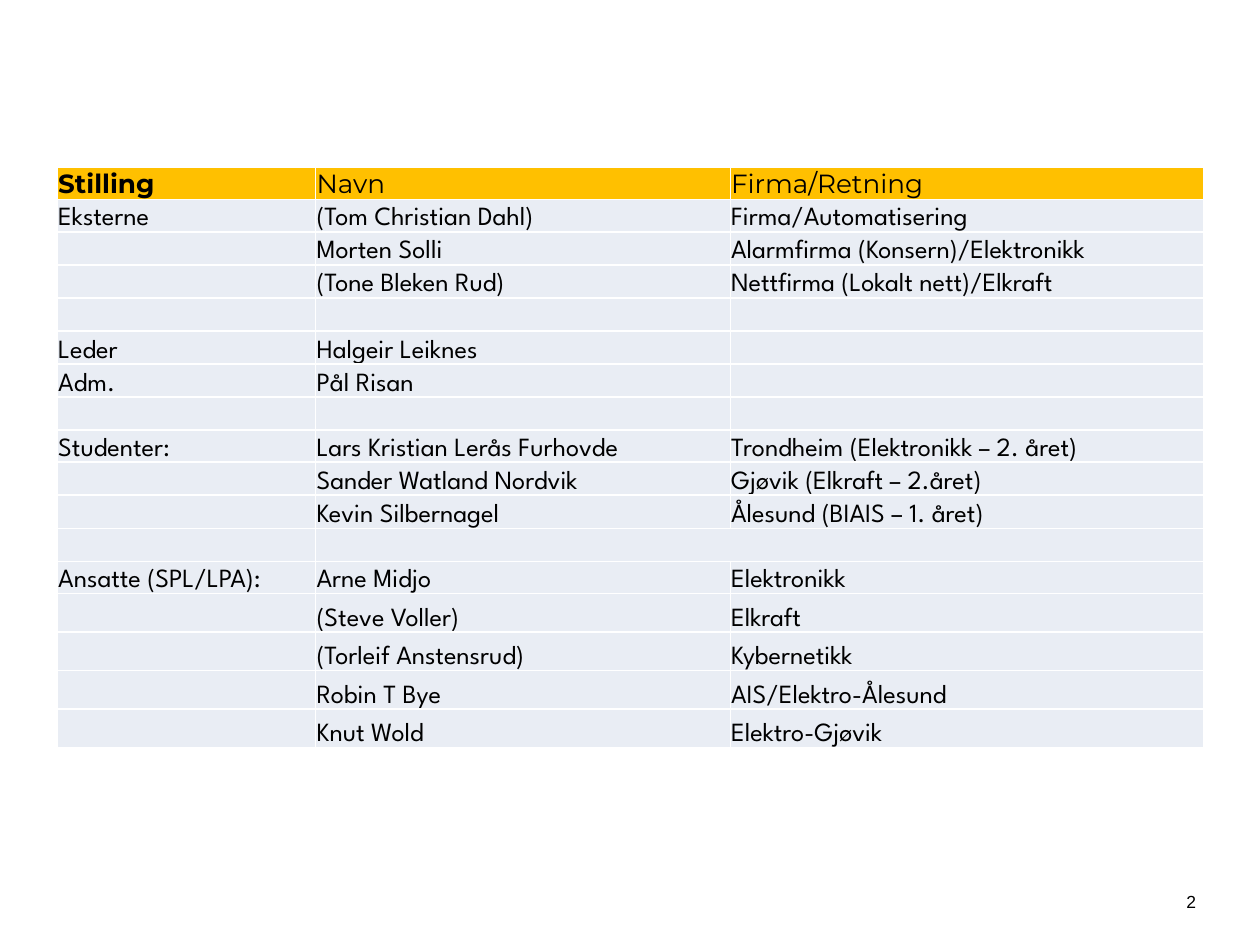
from dataclasses import dataclass

from lxml.etree import SubElement
from pptx import Presentation
from pptx.dml.color import RGBColor
from pptx.enum.text import MSO_ANCHOR, PP_ALIGN
from pptx.oxml.ns import qn
from pptx.util import Pt

COLORS = {"head": "FFC000", "body": "E9EDF4", "line": "FFFFFF", "text": "000000"}
WIDTHS = (147.6, 236.9, 270.7)
LOW, HIGH, TALL = 18.4, 22, 4
SIZE = 15


@dataclass(frozen=True)
class Row:
    post: str = ""
    name: str = ""
    firm: str = ""
    merge: bool = False


ROWS = (
    Row("Stilling", "Navn", "Firma/Retning"),
    Row("Eksterne", "(Tom Christian Dahl)", "Firma/Automatisering"),
    Row("", "Morten Solli", "Alarmfirma (Konsern)/Elektronikk"),
    Row("", "(Tone Bleken Rud)", "Nettfirma (Lokalt nett)/Elkraft"),
    Row(),
    Row("Leder", "Halgeir Leiknes"),
    Row("Adm.", "Pål Risan"),
    Row(),
    Row("Studenter:", "Lars Kristian Lerås Furhovde", "Trondheim (Elektronikk – 2. året)"),
    Row("", "Sander Watland Nordvik", "Gjøvik (Elkraft – 2.året)"),
    Row("", "Kevin Silbernagel", "Ålesund (BIAIS – 1. året)"),
    Row(merge=True),
    Row("Ansatte (SPL/LPA):", "Arne Midjo", "Elektronikk"),
    Row("", "(Steve Voller)", "Elkraft"),
    Row("", "(Torleif Anstensrud)", "Kybernetikk"),
    Row("", "Robin T Bye", "AIS/Elektro-Ålesund"),
    Row("", "Knut Wold", "Elektro-Gjøvik"),
)


def color(key: str) -> RGBColor:
    return RGBColor.from_string(COLORS[key])


def write(para, text: str, font: str, size: float, bold: bool = False) -> None:
    run = para.add_run()
    run.text = text
    run.font.name = font
    run.font.size = Pt(size)
    run.font.bold = bold
    run.font.color.rgb = color("text")


def border(cell) -> None:
    props = cell._tc.get_or_add_tcPr()
    for side in ("lnL", "lnR", "lnT", "lnB"):
        line = SubElement(props, qn(f"a:{side}"), w=str(Pt(1)))
        fill = SubElement(line, qn("a:solidFill"))
        SubElement(fill, qn("a:srgbClr"), val=COLORS["line"])


def draw_cell(cell, text: str, head: bool, bold: bool) -> None:
    border(cell)
    cell.fill.solid()
    cell.fill.fore_color.rgb = color("head" if head else "body")
    cell.margin_left = cell.margin_right = cell.margin_top = Pt(0.5)
    cell.margin_bottom = Pt(0)
    cell.vertical_anchor = MSO_ANCHOR.BOTTOM
    para = cell.text_frame.paragraphs[0]
    if text:
        write(para, text, "Montserrat" if head else "League Spartan", SIZE, bold)
    else:
        SubElement(para._p, qn("a:endParaRPr"), sz=str(SIZE * 100))


def draw_table(slide) -> None:
    high = LOW * (len(ROWS) - TALL) + HIGH * TALL
    frame = slide.shapes.add_table(
        len(ROWS), len(WIDTHS), Pt(32.8), Pt(95.3), Pt(sum(WIDTHS)), Pt(high)
    )
    table = frame.table
    table.first_row = table.horz_banding = False
    for col, width in zip(table.columns, WIDTHS):
        col.width = Pt(width)
    for r, row in enumerate(ROWS):
        table.rows[r].height = Pt(LOW if r < len(ROWS) - TALL else HIGH)
        for c, text in enumerate((row.post, row.name, row.firm)):
            draw_cell(table.cell(r, c), text, r == 0, r == c == 0)
        if row.merge:
            table.cell(r, 1).merge(table.cell(r, 2))


def draw_page(slide) -> None:
    box = slide.shapes.add_textbox(Pt(667.4), Pt(505.4), Pt(26.6), Pt(28.8))
    box.text_frame.word_wrap = True
    para = box.text_frame.paragraphs[0]
    para.alignment = PP_ALIGN.CENTER
    write(para, "2", "Arial", 10)


def main() -> None:
    """Build the slide with the table of members."""
    deck = Presentation()
    deck.slide_width, deck.slide_height = Pt(720), Pt(540)
    slide = deck.slides.add_slide(deck.slide_layouts[6])
    draw_table(slide)
    draw_page(slide)
    deck.save("out.pptx")


if __name__ == "__main__":
    main()
